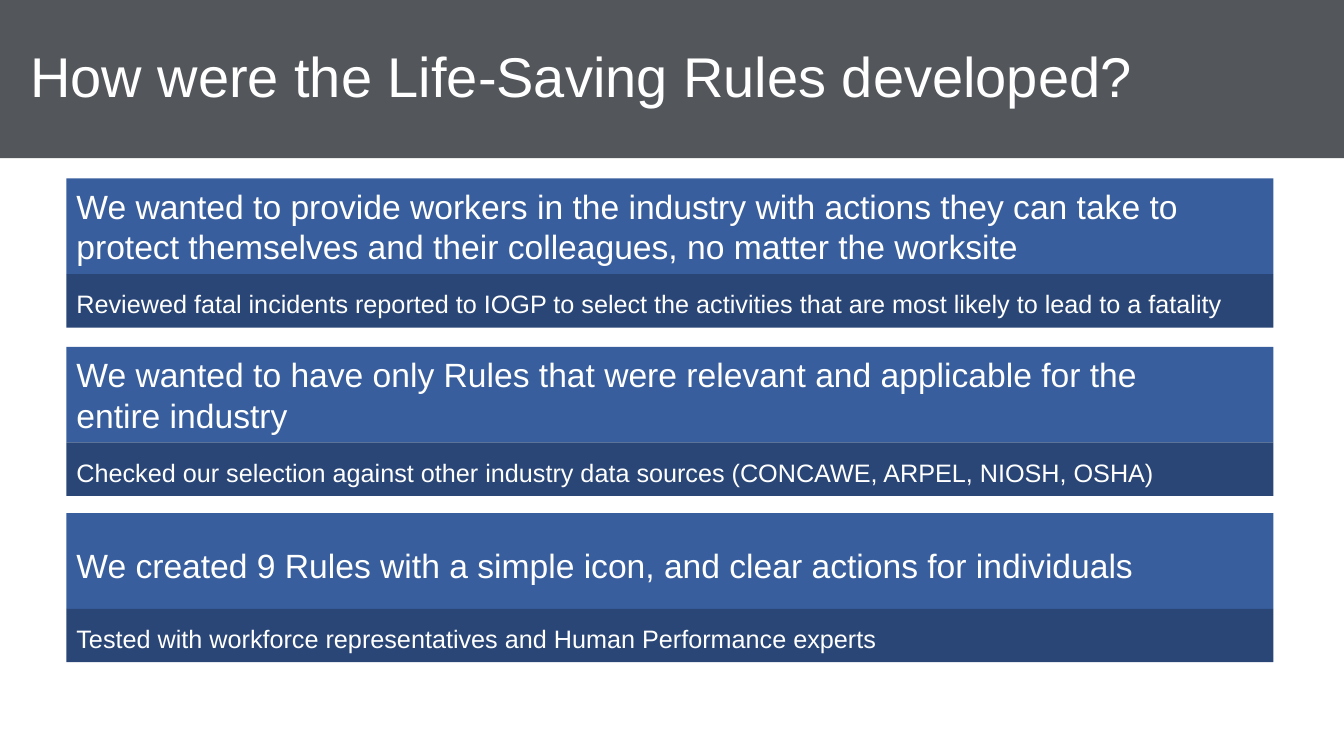
from dataclasses import dataclass

from pptx import Presentation
from pptx.dml.color import RGBColor
from pptx.enum.shapes import MSO_SHAPE as Shape
from pptx.enum.text import MSO_ANCHOR as Anchor, PP_ALIGN as Align
from pptx.slide import Slide
from pptx.util import Inches, Pt


@dataclass(frozen=True)
class Theme:
    font: str = "Arial"
    text: str = "FFFFFF"
    banner: str = "53565A"
    heading: str = "385E9D"
    detail: str = "2A4676"
    title_size: int = 40
    heading_size: int = 24
    detail_size: int = 18


@dataclass(frozen=True)
class Bar:
    left: float
    top: float
    width: float
    height: float
    fill: str
    size: int
    text: str
    line_spacing: float = 1.0
    anchor: Anchor = Anchor.MIDDLE
    side_inset: float = 0.1
    top_inset: float = 0.05


@dataclass(frozen=True)
class Step:
    top: float
    heading: str
    detail: str
    heading_spacing: float = 1.0


THEME = Theme()
SLIDE_WIDTH, SLIDE_HEIGHT = 13.33, 7.5
STEP_LEFT, STEP_WIDTH = 0.66, 11.97
HEADING_HEIGHT, DETAIL_HEIGHT = 0.95, 0.53

TITLE = Bar(0, 0, SLIDE_WIDTH, 1.57, THEME.banner, THEME.title_size,
            "How were the Life-Saving Rules developed?",
            line_spacing=0.9, anchor=Anchor.TOP, side_inset=0.3, top_inset=0.49)

STEPS = [
    Step(1.77,
         "We wanted to provide workers in the industry with actions they can take to "
         "protect themselves and their colleagues, no matter the worksite",
         "Reviewed fatal incidents reported to IOGP to select the activities that are "
         "most likely to lead to a fatality"),
    Step(3.44,
         "We wanted to have only Rules that were relevant and applicable for the \n"
         "entire industry",
         "Checked our selection against other industry data sources "
         "(CONCAWE, ARPEL, NIOSH, OSHA)"),
    Step(5.09,
         "We created 9 Rules with a simple icon, and clear actions for individuals",
         "Tested with workforce representatives and Human Performance experts",
         heading_spacing=1.2),
]


def add_bar(page: Slide, bar: Bar) -> None:
    box = page.shapes.add_shape(Shape.RECTANGLE, Inches(bar.left), Inches(bar.top),
                                Inches(bar.width), Inches(bar.height))
    box.shadow.inherit = False
    box.fill.solid()
    box.fill.fore_color.rgb = RGBColor.from_string(bar.fill)
    box.line.fill.background()

    frame = box.text_frame
    frame.word_wrap = True
    frame.vertical_anchor = bar.anchor
    frame.margin_left = frame.margin_right = Inches(bar.side_inset)
    frame.margin_top = Inches(bar.top_inset)
    frame.margin_bottom = Inches(0.05)

    para = frame.paragraphs[0]
    para.alignment = Align.LEFT
    para.line_spacing = bar.line_spacing
    for index, line in enumerate(bar.text.split("\n")):
        if index:
            para.add_line_break()
        span = para.add_run()
        span.text = line
        span.font.name = THEME.font
        span.font.size = Pt(bar.size)
        span.font.color.rgb = RGBColor.from_string(THEME.text)


def add_step(page: Slide, step: Step) -> None:
    """Stack the detail bar directly under its heading bar."""
    add_bar(page, Bar(STEP_LEFT, step.top, STEP_WIDTH, HEADING_HEIGHT,
                      THEME.heading, THEME.heading_size, step.heading,
                      line_spacing=step.heading_spacing))
    add_bar(page, Bar(STEP_LEFT, step.top + HEADING_HEIGHT, STEP_WIDTH, DETAIL_HEIGHT,
                      THEME.detail, THEME.detail_size, step.detail,
                      line_spacing=1.2))


def main() -> None:
    deck = Presentation()
    deck.slide_width = Inches(SLIDE_WIDTH)
    deck.slide_height = Inches(SLIDE_HEIGHT)
    page = deck.slides.add_slide(deck.slide_layouts[6])
    add_bar(page, TITLE)
    for step in STEPS:
        add_step(page, step)
    deck.save("out.pptx")


if __name__ == "__main__":
    main()
